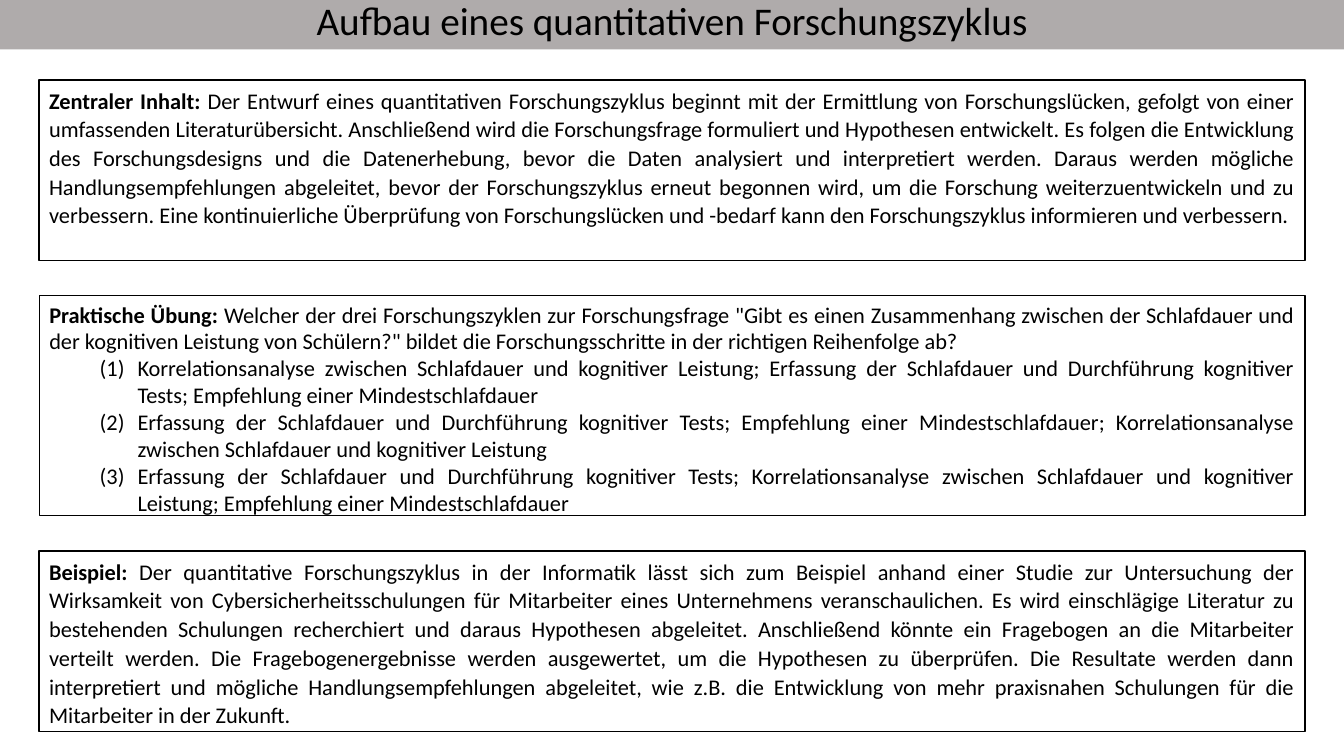
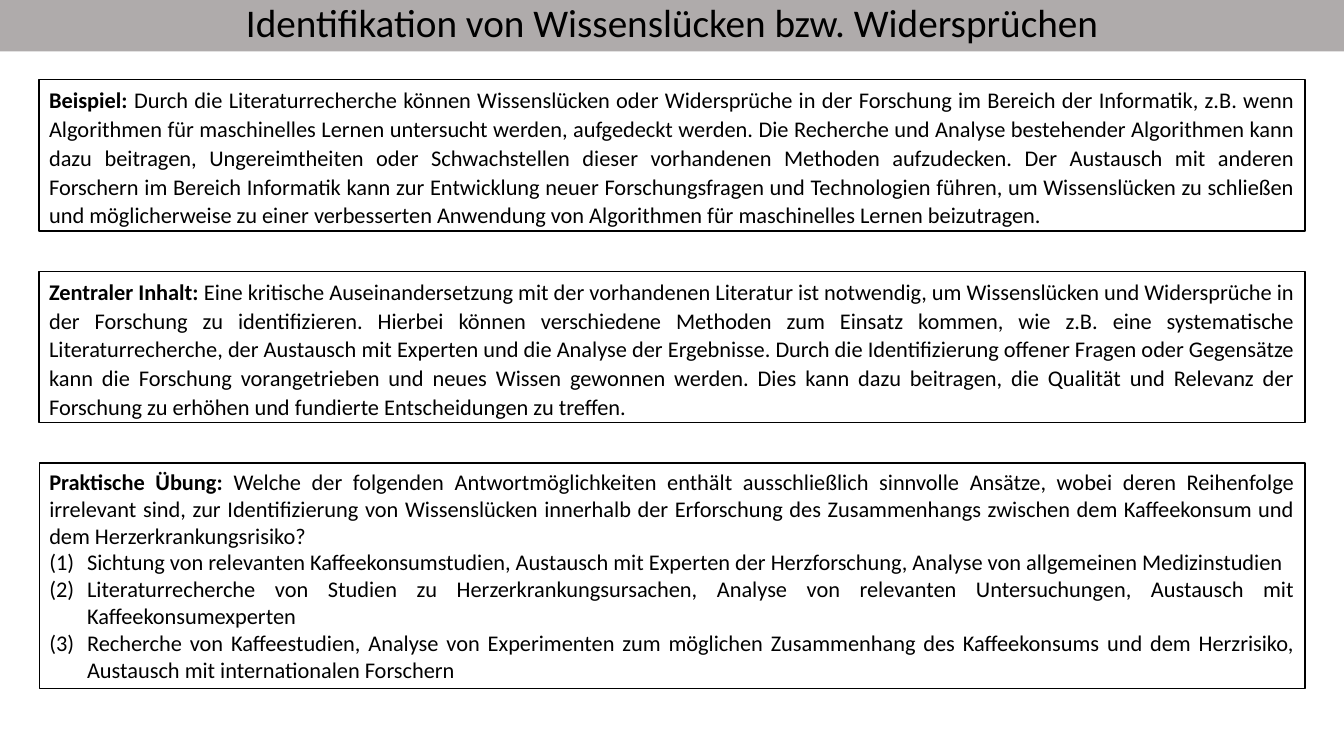
from dataclasses import dataclass

from lxml.etree import SubElement
from pptx import Presentation
from pptx.dml.color import RGBColor
from pptx.enum.text import MSO_ANCHOR as Anchor
from pptx.enum.text import MSO_AUTO_SIZE as AutoSize
from pptx.enum.text import PP_ALIGN as Align
from pptx.oxml.ns import qn
from pptx.util import Pt


@dataclass(frozen=True)
class Theme:
    font: str = "Calibri"
    ink: RGBColor = RGBColor(0x00, 0x00, 0x00)
    band: RGBColor = RGBColor(0xAF, 0xAB, 0xAB)
    title_size: int = 28
    text_size: int = 16
    border: int = 1


THEME = Theme()
PAGE_WIDTH, PAGE_HEIGHT = 960, 540
BOX_LEFT, BOX_TOP, BOX_WIDTH = 28, 57, 904.2
HANGING = 27

TITLE = {"alignment": Align.CENTER, "line_spacing": 0.9}
PROSE = {"alignment": Align.JUSTIFY, "line_spacing": 1.07,
         "space_before": Pt(10), "space_after": Pt(8)}
EXERCISE = {"alignment": Align.JUSTIFY, "line_spacing": 1.0,
            "space_before": Pt(0), "space_after": Pt(0)}

PAGES = [
    {
        "title": "Aufbau eines quantitativen Forschungszyklus",
        "band_height": 35.3,
        "gap": 25.3,
        "boxes": [
            {
                "height": 128.9,
                "label": "Zentraler Inhalt: ",
                "text": "Der Entwurf eines quantitativen Forschungszyklus beginnt mit der "
                        "Ermittlung von Forschungslücken, gefolgt von einer umfassenden "
                        "Literaturübersicht. Anschließend wird die Forschungsfrage formuliert "
                        "und Hypothesen entwickelt. Es folgen die Entwicklung des "
                        "Forschungsdesigns und die Datenerhebung, bevor die Daten analysiert "
                        "und interpretiert werden. Daraus werden mögliche "
                        "Handlungsempfehlungen abgeleitet, bevor der Forschungszyklus erneut "
                        "begonnen wird, um die Forschung weiterzuentwickeln und zu verbessern. "
                        "Eine kontinuierliche Überprüfung von Forschungslücken und -bedarf "
                        "kann den Forschungszyklus informieren und verbessern.",
            },
            {
                "height": 157,
                "label": "Praktische Übung: ",
                "text": "Welcher der drei Forschungszyklen zur Forschungsfrage \"Gibt es einen "
                        "Zusammenhang zwischen der Schlafdauer und der kognitiven Leistung von "
                        "Schülern?\" bildet die Forschungsschritte in der richtigen "
                        "Reihenfolge ab?",
                "list_margin": 63,
                "answers": [
                    "Korrelationsanalyse zwischen Schlafdauer und kognitiver Leistung; "
                    "Erfassung der Schlafdauer und Durchführung kognitiver Tests; "
                    "Empfehlung einer Mindestschlafdauer",
                    "Erfassung der Schlafdauer und Durchführung kognitiver Tests; "
                    "Empfehlung einer Mindestschlafdauer; Korrelationsanalyse zwischen "
                    "Schlafdauer und kognitiver Leistung",
                    "Erfassung der Schlafdauer und Durchführung kognitiver Tests; "
                    "Korrelationsanalyse zwischen Schlafdauer und kognitiver Leistung; "
                    "Empfehlung einer Mindestschlafdauer",
                ],
            },
            {
                "height": 128.9,
                "label": "Beispiel: ",
                "text": "Der quantitative Forschungszyklus in der Informatik lässt sich zum "
                        "Beispiel anhand einer Studie zur Untersuchung der Wirksamkeit von "
                        "Cybersicherheitsschulungen für Mitarbeiter eines Unternehmens "
                        "veranschaulichen. Es wird einschlägige Literatur zu bestehenden "
                        "Schulungen recherchiert und daraus Hypothesen abgeleitet. "
                        "Anschließend könnte ein Fragebogen an die Mitarbeiter verteilt "
                        "werden. Die Fragebogenergebnisse werden ausgewertet, um die "
                        "Hypothesen zu überprüfen. Die Resultate werden dann interpretiert "
                        "und mögliche Handlungsempfehlungen abgeleitet, wie z.B. die "
                        "Entwicklung von mehr praxisnahen Schulungen für die Mitarbeiter in "
                        "der Zukunft.",
            },
        ],
    },
    {
        "title": "Identifikation von Wissenslücken bzw. Widersprüchen",
        "band_height": 36.7,
        "gap": 28.8,
        "boxes": [
            {
                "height": 108,
                "label": "Beispiel: ",
                "text": "Durch die Literaturrecherche können Wissenslücken oder Widersprüche "
                        "in der Forschung im Bereich der Informatik, z.B. wenn Algorithmen für "
                        "maschinelles Lernen untersucht werden, aufgedeckt werden. Die "
                        "Recherche und Analyse bestehender Algorithmen kann dazu beitragen, "
                        "Ungereimtheiten oder Schwachstellen dieser vorhandenen Methoden "
                        "aufzudecken. Der Austausch mit anderen Forschern im Bereich "
                        "Informatik kann zur Entwicklung neuer Forschungsfragen und "
                        "Technologien führen, um Wissenslücken zu schließen und "
                        "möglicherweise zu einer verbesserten Anwendung von Algorithmen für "
                        "maschinelles Lernen beizutragen.",
            },
            {
                "height": 108,
                "label": "Zentraler Inhalt: ",
                "text": "Eine kritische Auseinandersetzung mit der vorhandenen Literatur ist "
                        "notwendig, um Wissenslücken und Widersprüche in der Forschung zu "
                        "identifizieren. Hierbei können verschiedene Methoden zum Einsatz "
                        "kommen, wie z.B. eine systematische Literaturrecherche, der Austausch "
                        "mit Experten und die Analyse der Ergebnisse. Durch die "
                        "Identifizierung offener Fragen oder Gegensätze kann die Forschung "
                        "vorangetrieben und neues Wissen gewonnen werden. Dies kann dazu "
                        "beitragen, die Qualität und Relevanz der Forschung zu erhöhen und "
                        "fundierte Entscheidungen zu treffen.",
            },
            {
                "height": 161.3,
                "label": "Praktische Übung: ",
                "text": "Welche der folgenden Antwortmöglichkeiten enthält ausschließlich "
                        "sinnvolle Ansätze, wobei deren Reihenfolge irrelevant sind, zur "
                        "Identifizierung von Wissenslücken innerhalb der Erforschung des "
                        "Zusammenhangs zwischen dem Kaffeekonsum und dem "
                        "Herzerkrankungsrisiko?",
                "list_margin": HANGING,
                "answers": [
                    "Sichtung von relevanten Kaffeekonsumstudien, Austausch mit Experten der "
                    "Herzforschung, Analyse von allgemeinen Medizinstudien",
                    "Literaturrecherche von Studien zu Herzerkrankungsursachen, Analyse von "
                    "relevanten Untersuchungen, Austausch mit Kaffeekonsumexperten",
                    "Recherche von Kaffeestudien, Analyse von Experimenten zum möglichen "
                    "Zusammenhang des Kaffeekonsums und dem Herzrisiko, Austausch mit "
                    "internationalen Forschern",
                ],
            },
        ],
    },
]


def apply(target, formats):
    for name, value in formats.items():
        setattr(target, name, value)


def place(shape, left, top, width, height, anchor):
    apply(shape, {"left": Pt(left), "top": Pt(top),
                  "width": Pt(width), "height": Pt(height)})
    apply(shape.text_frame, {"word_wrap": True, "auto_size": AutoSize.NONE,
                             "vertical_anchor": anchor})


def add_span(para, text, size, bold=False):
    span = para.add_run()
    span.text = text
    apply(span.font, {"name": THEME.font, "size": Pt(size), "bold": bold})
    span.font.color.rgb = THEME.ink


def set_bullet(para, margin, indent, numbered):
    """Give the paragraph a "(1)" number, or take its bullet away."""
    props = para._p.get_or_add_pPr()
    props.set("marL", str(Pt(margin)))
    props.set("indent", str(Pt(indent)))
    if numbered:
        SubElement(props, qn("a:buFont"), typeface=THEME.font)
        SubElement(props, qn("a:buAutoNum"), type="arabicParenBoth")
    else:
        SubElement(props, qn("a:buNone"))


def fill_title(page, text, height):
    title = page.shapes.title
    place(title, 0, 0, PAGE_WIDTH, height, Anchor.BOTTOM)
    title.fill.solid()
    title.fill.fore_color.rgb = THEME.band
    para = title.text_frame.paragraphs[0]
    apply(para, TITLE)
    add_span(para, text, THEME.title_size)


def fill_box(shape, top, box, formats):
    """Frame the shape and write its bold label and text."""
    place(shape, BOX_LEFT, top, BOX_WIDTH, box["height"], Anchor.TOP)
    shape.line.color.rgb = THEME.ink
    shape.line.width = Pt(THEME.border)
    para = shape.text_frame.paragraphs[0]
    apply(para, formats)
    set_bullet(para, 0, 0, numbered=False)
    add_span(para, box["label"], THEME.text_size, bold=True)
    add_span(para, box["text"], THEME.text_size)


def add_answers(shape, box):
    for answer in box["answers"]:
        para = shape.text_frame.add_paragraph()
        apply(para, EXERCISE)
        set_bullet(para, box["list_margin"], -HANGING, numbered=True)
        add_span(para, answer, THEME.text_size)


def add_page(deck, content):
    page = deck.slides.add_slide(deck.slide_layouts.get_by_name("Title and Content"))
    fill_title(page, content["title"], content["band_height"])
    top = BOX_TOP
    for box in content["boxes"]:
        if "answers" in box:
            body = page.placeholders[1]
            fill_box(body, top, box, EXERCISE)
            add_answers(body, box)
        else:
            fill_box(page.shapes.add_textbox(0, 0, 0, 0), top, box, PROSE)
        top += box["height"] + content["gap"]


def main():
    deck = Presentation()
    apply(deck, {"slide_width": Pt(PAGE_WIDTH), "slide_height": Pt(PAGE_HEIGHT)})
    for content in PAGES:
        add_page(deck, content)
    deck.save("out.pptx")


if __name__ == "__main__":
    main()
